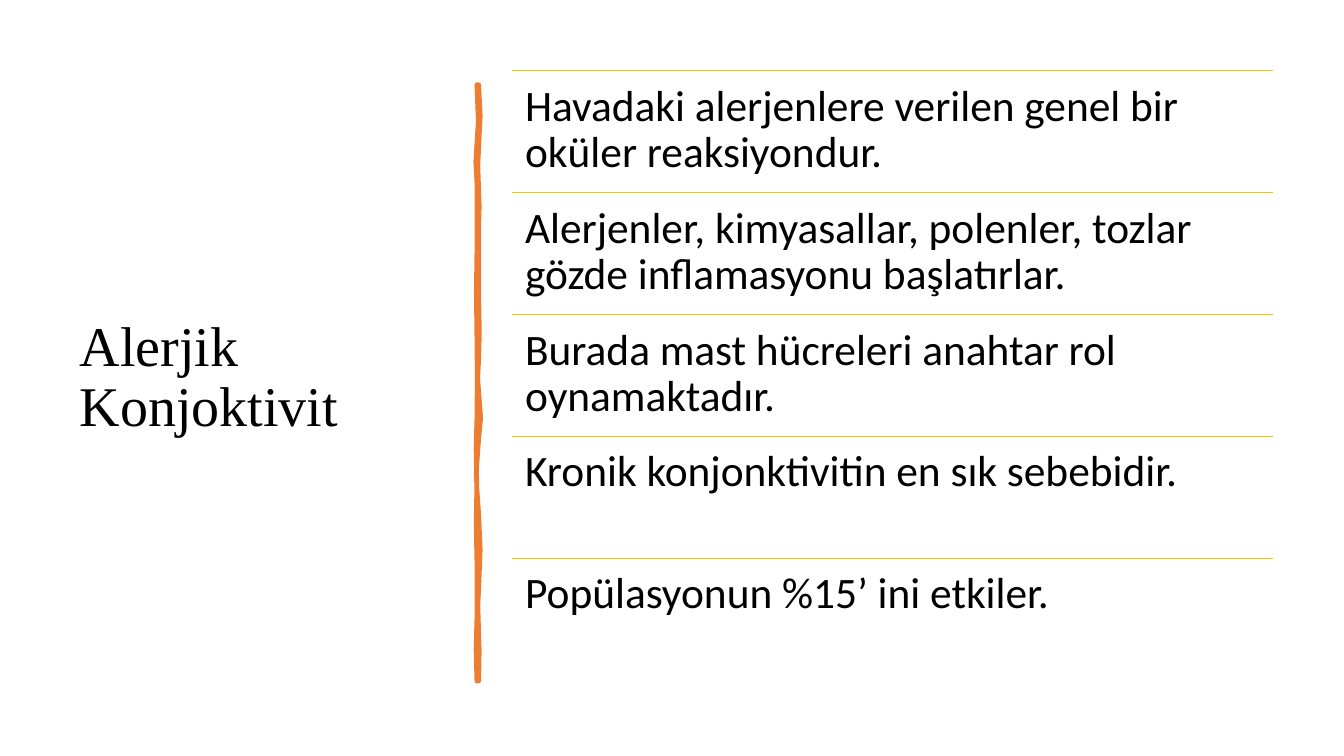
from lxml import etree
from pptx import Presentation
from pptx.dml.color import RGBColor
from pptx.enum.shapes import MSO_CONNECTOR as CONN
from pptx.enum.text import MSO_ANCHOR as ANCHOR
from pptx.oxml.ns import qn
from pptx.util import Pt

BLACK = RGBColor(0x00, 0x00, 0x00)
ORANGE = RGBColor(0xED, 0x7D, 0x31)
GOLD = RGBColor(0xFF, 0xC0, 0x00)

TITLE_FONT = {"name": "Times New Roman", "size": Pt(40)}
FACT_FONT = {"name": "Calibri", "size": Pt(31)}
FACTS = [
    "Havadaki alerjenlere verilen genel bir oküler reaksiyondur.",
    "Alerjenler, kimyasallar, polenler, tozlar gözde inflamasyonu başlatırlar.",
    "Burada mast hücreleri anahtar rol oynamaktadır.",
    "Kronik konjonktivitin en sık sebebidir.",
    "Popülasyonun %15’ ini etkiler.",
]
RIGHT_EDGE = [
    (2, 0), (3.1, 22), (2, 45), (1.4, 58), (2.4, 87), (2, 102), (2, 151),
    (2.5, 177), (2, 196), (1.3, 210), (3.4, 238), (2, 253), (0.1, 279),
    (2, 307), (3.1, 332), (2, 360), (1.4, 372), (2.4, 404), (2, 426),
]
LEFT_EDGE = [
    (0.6, 426), (0, 404), (0.6, 381), (0.6, 341), (0.1, 314), (0.6, 283),
    (0, 260), (0.6, 238), (0.9, 210), (0.6, 181), (0.2, 148), (0.6, 120),
    (0.6, 70), (-0.2, 55), (1.6, 26), (0.6, 0),
]


def add_text(s, text, box, font, inset, anchor):
    tf = s.shapes.add_textbox(*map(Pt, box)).text_frame
    margins = dict(zip(("margin_left", "margin_top", "margin_right", "margin_bottom"),
                       map(Pt, inset)))
    for name, value in {"word_wrap": True, "vertical_anchor": anchor, **margins}.items():
        setattr(tf, name, value)
    p = tf.paragraphs[0]
    p.line_spacing = 0.9
    r = p.add_run()
    r.text = text
    for name, value in font.items():
        setattr(r.font, name, value)
    r.font.color.rgb = BLACK


def add_title(s, box):
    add_text(s, "Alerjik Konjoktivit", box, TITLE_FONT, (7.2, 3.6, 7.2, 3.6), ANCHOR.MIDDLE)


def add_brush_stroke(s, left, top):
    outline = [(Pt(left + x), Pt(top + y)) for x, y in RIGHT_EDGE + LEFT_EDGE]
    builder = s.shapes.build_freeform(*outline[0])
    builder.add_line_segments(outline[1:], close=True)
    sp = builder.convert_to_shape()
    sp.shadow.inherit = False
    sp.fill.solid()
    sp.fill.fore_color.rgb = ORANGE
    sp.line.color.rgb = ORANGE
    sp.line.width = Pt(3.25)
    etree.SubElement(sp.line._get_or_add_ln(), qn("a:round"))


def add_facts(s, left, top, width, height):
    row = height / len(FACTS)
    for i, fact in enumerate(FACTS):
        y = top + i * row
        rule = s.shapes.add_connector(CONN.STRAIGHT, Pt(left), Pt(y), Pt(left + width), Pt(y))
        rule.line.color.rgb = GOLD
        rule.line.width = Pt(1)
        etree.SubElement(rule._element.spPr, qn("a:effectLst"))
        add_text(s, fact, (left, y, width, row), FACT_FONT, (9.3,) * 4, ANCHOR.TOP)


def main():
    prs = Presentation()
    prs.slide_width, prs.slide_height = Pt(960), Pt(540)
    s = prs.slides.add_slide(prs.slide_layouts[6])
    add_title(s, (50, 50.4, 269, 440))
    add_brush_stroke(s, 340, 60.5)
    add_facts(s, 365.8, 50.4, 543.6, 435.6)
    prs.save("out.pptx")


if __name__ == "__main__":
    main()
